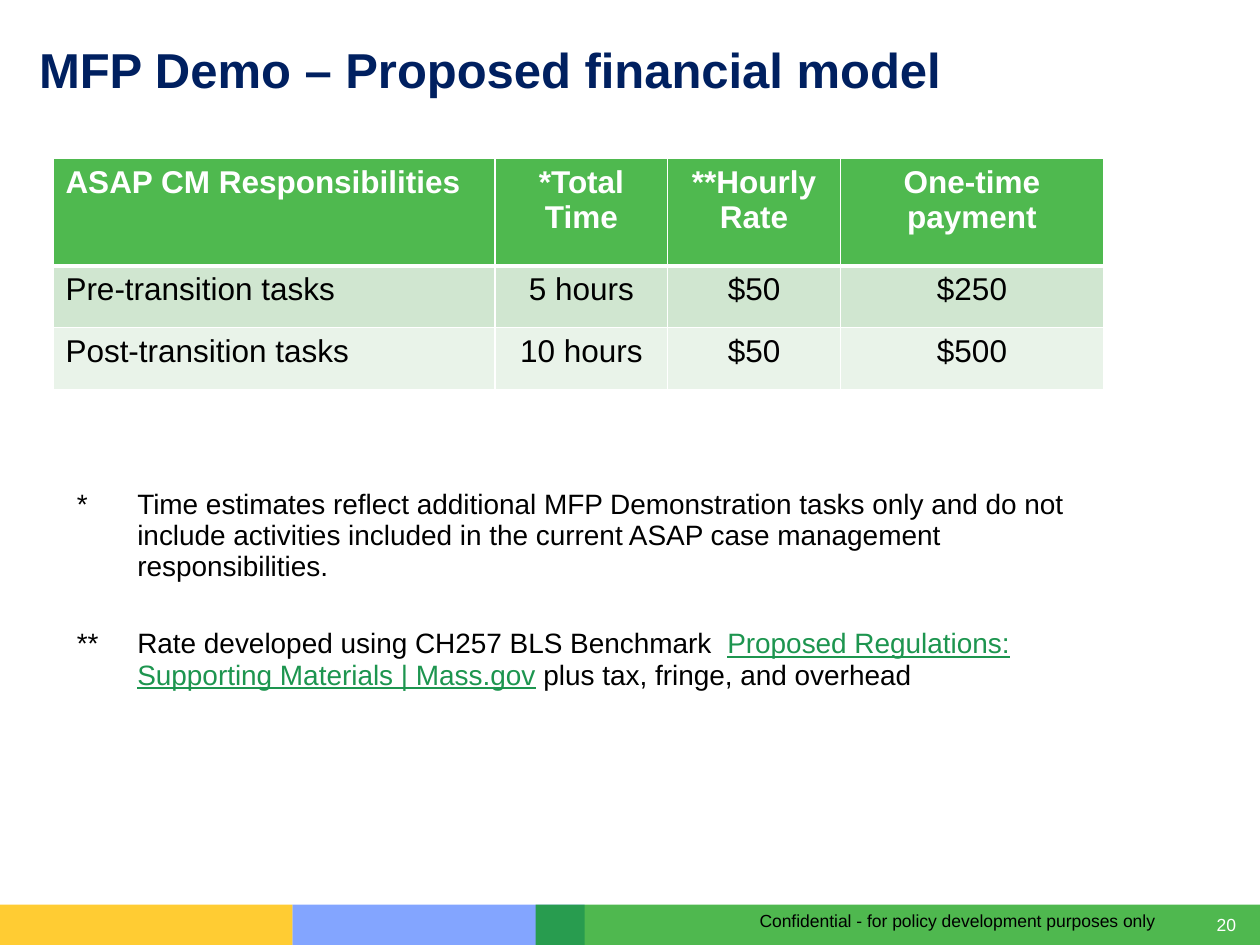
from lxml.etree import SubElement
from pptx import Presentation
from pptx.dml.color import RGBColor
from pptx.enum.shapes import MSO_SHAPE
from pptx.enum.text import MSO_ANCHOR, PP_ALIGN
from pptx.oxml.ns import qn
from pptx.util import Inches, Pt

COLORS = {
    "white": "FFFFFF", "black": "000000", "navy": "002060", "link": "1D954F",
    "blue": "5E8BFF", "yellow": "FFC000", "green": "009900",
    "header": "4FB94F", "band_dark": "D0E6D0", "band_light": "E9F3E9",
}
FONT = "Arial"
NO_STYLE = "{2D5ABB26-0587-4C30-8999-92F81FD0307C}"


def rgb(name):
    return RGBColor.from_string(COLORS[name])


def add_run(p, text, size, color="black", bold=False, underline=False):
    r = p.add_run()
    r.text = text
    r.font.name = FONT
    r.font.size = Pt(size)
    r.font.bold = bold
    r.font.underline = underline
    r.font.color.rgb = rgb(color)


def add_bar(s, left, width, color, opacity):
    sp = s.shapes.add_shape(MSO_SHAPE.RECTANGLE, Inches(left), Inches(7.18),
                            Inches(width), Inches(0.32))
    sp.shadow.inherit = False
    sp.line.fill.background()
    sp.fill.solid()
    sp.fill.fore_color.rgb = rgb(color)
    color_el = sp.fill._xPr.find(qn("a:solidFill"))[0]
    SubElement(color_el, qn("a:alpha"), val=str(opacity * 1000))


def add_text(s, box, text, size, color, bold=False, align=PP_ALIGN.LEFT,
             inset=True, wrap=True, anchor=MSO_ANCHOR.TOP):
    tf = s.shapes.add_textbox(*map(Inches, box)).text_frame
    tf.word_wrap = wrap
    tf.vertical_anchor = anchor
    if not inset:
        tf.margin_left = tf.margin_right = tf.margin_top = tf.margin_bottom = 0
    p = tf.paragraphs[0]
    p.alignment = align
    add_run(p, text, size, color, bold)


def add_table(s, left, top, col_widths, row_heights):
    frame = s.shapes.add_table(
        len(row_heights), len(col_widths), Inches(left), Inches(top),
        Inches(sum(col_widths)), Inches(sum(row_heights)))
    table = frame.table
    table._tbl.tblPr.find(qn("a:tableStyleId")).text = NO_STYLE
    table.first_row = table.horz_banding = False
    for col, width in zip(table.columns, col_widths):
        col.width = Inches(width)
    for row, height in zip(table.rows, row_heights):
        row.height = Inches(height)
    return table


def set_borders(cell, top, bottom):
    tc_pr = cell._tc.get_or_add_tcPr()
    for side, width in (("L", 1), ("R", 1), ("T", top), ("B", bottom)):
        ln = SubElement(tc_pr, qn(f"a:ln{side}"), w=str(Pt(width)))
        fill = SubElement(ln, qn("a:solidFill"))
        SubElement(fill, qn("a:srgbClr"), val=COLORS["white"])


def add_payment_table(s):
    rows = [
        ("ASAP CM Responsibilities", "*Total Time", "**Hourly Rate", "One-time payment"),
        ("Pre-transition tasks", "5 hours", "$50", "$250"),
        ("Post-transition tasks", "10 hours", "$50", "$500"),
    ]
    fills = ["header", "band_dark", "band_light"]
    table = add_table(s, 0.42, 1.26, [3.51, 1.37, 1.37, 2.09], [0.85, 0.49, 0.49])
    for i, (row, fill) in enumerate(zip(rows, fills)):
        header = i == 0
        for j, text in enumerate(row):
            cell = table.cell(i, j)
            set_borders(cell, 3 if i == 1 else 1, 3 if header else 1)
            cell.fill.solid()
            cell.fill.fore_color.rgb = rgb(fill)
            p = cell.text_frame.paragraphs[0]
            p.alignment = PP_ALIGN.CENTER if j else PP_ALIGN.LEFT
            add_run(p, text, 18, "white" if header else "black", bold=header)


def add_footnotes(s):
    # Each note is a mark and a list of (text, is_link) runs
    notes = [
        ("*", [("Time estimates reflect additional MFP Demonstration tasks only and do "
                "not include activities included in the current ASAP case management "
                "responsibilities.", False)]),
        ("**", [("Rate developed using CH257 BLS Benchmark  ", False),
                ("Proposed Regulations: Supporting Materials | Mass.gov", True),
                (" plus tax, fringe, and overhead", False)]),
    ]
    table = add_table(s, 0.51, 3.83, [0.48, 7.94], [1.11, 0.69])
    for i, (mark, runs) in enumerate(notes):
        for j, cell_runs in enumerate(([(mark, False)], runs)):
            cell = table.cell(i, j)
            cell.fill.background()
            p = cell.text_frame.paragraphs[0]
            for text, is_link in cell_runs:
                add_run(p, text, 16, "link" if is_link else "black", underline=is_link)


def main():
    prs = Presentation()
    prs.slide_width, prs.slide_height = Inches(10), Inches(7.5)
    s = prs.slides.add_slide(prs.slide_layouts[6])

    # Footer band
    add_bar(s, 2.32, 2.32, "blue", 77)
    add_bar(s, 0, 2.32, "yellow", 80)
    add_bar(s, 4.25, 5.75, "green", 69)
    add_text(s, (9.63, 7.25, 0.18, 0.17), "20", 10, "white", align=PP_ALIGN.RIGHT,
             inset=False, wrap=False, anchor=MSO_ANCHOR.MIDDLE)
    add_text(s, (5.93, 7.17, 5, 0.27),
             "Confidential - for policy development purposes only", 10, "black")

    # Title
    add_text(s, (0.31, 0.31, 8.81, 0.47), "MFP Demo – Proposed financial model",
             28, "navy", bold=True, inset=False)

    # Tables
    add_payment_table(s)
    add_footnotes(s)

    prs.save("out.pptx")


if __name__ == "__main__":
    main()
